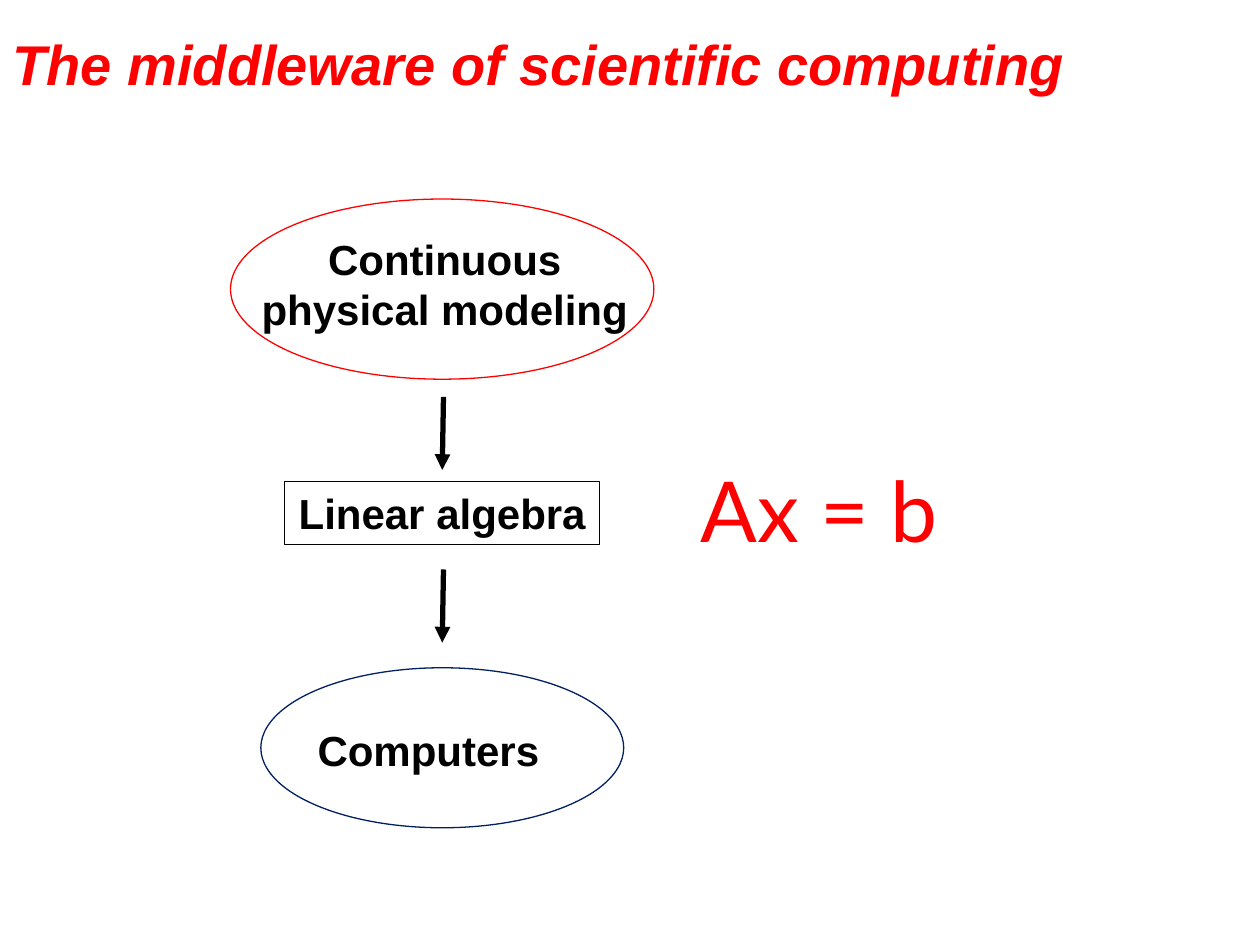
from lxml.etree import SubElement
from pptx import Presentation
from pptx.dml.color import RGBColor
from pptx.enum.shapes import MSO_CONNECTOR as Link, MSO_SHAPE as Shape
from pptx.enum.text import MSO_ANCHOR as Anchor, MSO_AUTO_SIZE as Fit, PP_ALIGN as Align
from pptx.oxml.ns import qn
from pptx.util import Inches, Pt

RED, BLACK, NAVY = "FF0000", "000000", "002060"


def paint(color):
    return RGBColor.from_string(color)


def write(frame, text, size=24, font="Arial", color=BLACK, bold=True,
          italic=False, align=Align.CENTER, anchor=Anchor.TOP, wrap=False,
          fit=Fit.SHAPE_TO_FIT_TEXT):
    """Fill a text frame with one paragraph; \\v breaks the line."""
    frame.word_wrap, frame.auto_size = wrap, fit
    frame.vertical_anchor = anchor
    para = frame.paragraphs[0]
    para.text, para.alignment = text, align
    for run in para.runs:
        run.font.name, run.font.size = font, Pt(size)
        run.font.bold, run.font.italic = bold, italic
        run.font.color.rgb = paint(color)


class Board:
    def __init__(self, deck):
        self.slide = deck.slides.add_slide(deck.slide_layouts[5])
        self.flow = self.slide.shapes.add_group_shape().shapes

    def title(self, text, box):
        head = self.slide.shapes.title
        head.left, head.top, head.width, head.height = map(Inches, box)
        write(head.text_frame, text, size=32, color=RED, italic=True,
              align=Align.LEFT, anchor=Anchor.MIDDLE, wrap=True, fit=Fit.NONE)

    def label(self, text, box, shapes=None, **style):
        item = (shapes or self.flow).add_textbox(*map(Inches, box))
        write(item.text_frame, text, **style)

    def outline(self, kind, box, color, text=None):
        item = self.flow.add_shape(kind, *map(Inches, box))
        item.shadow.inherit = False
        item.fill.background()
        item.line.color.rgb = paint(color)
        item.line.width = Pt(0.75)
        if text:
            write(item.text_frame, text)

    def arrow(self, *ends):
        item = self.flow.add_connector(Link.STRAIGHT, *map(Inches, ends))
        item.line.color.rgb = paint(BLACK)
        item.line.width = Pt(3)
        props = item.line._get_or_add_ln()
        SubElement(props, qn("a:tailEnd"), type="triangle")
        SubElement(item._element.spPr, qn("a:effectLst"))


def main():
    deck = Presentation()
    deck.slide_width, deck.slide_height = Inches(10), Inches(7.5)
    board = Board(deck)
    board.title("The middleware of scientific computing", (0, 0, 8.88, 1))
    board.label("Computers", (2.41, 5.7, 1.98, 0.5))
    board.outline(Shape.OVAL, (1.83, 1.58, 3.36, 1.43), RED)
    board.outline(Shape.OVAL, (2.07, 5.3, 2.88, 1.27), NAVY)
    board.label("Continuous\vphysical modeling", (1.96, 1.8, 3.14, 0.91))
    board.outline(Shape.RECTANGLE, (2.26, 3.82, 2.5, 0.5), BLACK,
                  "Linear algebra")
    for top in (3.15, 4.52):
        board.arrow(3.52, top, 3.51, top + 0.58)
    board.label("Ax = b", (5.46, 3.59, 3.09, 0.91), board.slide.shapes,
                size=48, font="Lato", color=RED, bold=False,
                align=Align.LEFT, wrap=True)
    deck.save("out.pptx")


if __name__ == "__main__":
    main()
